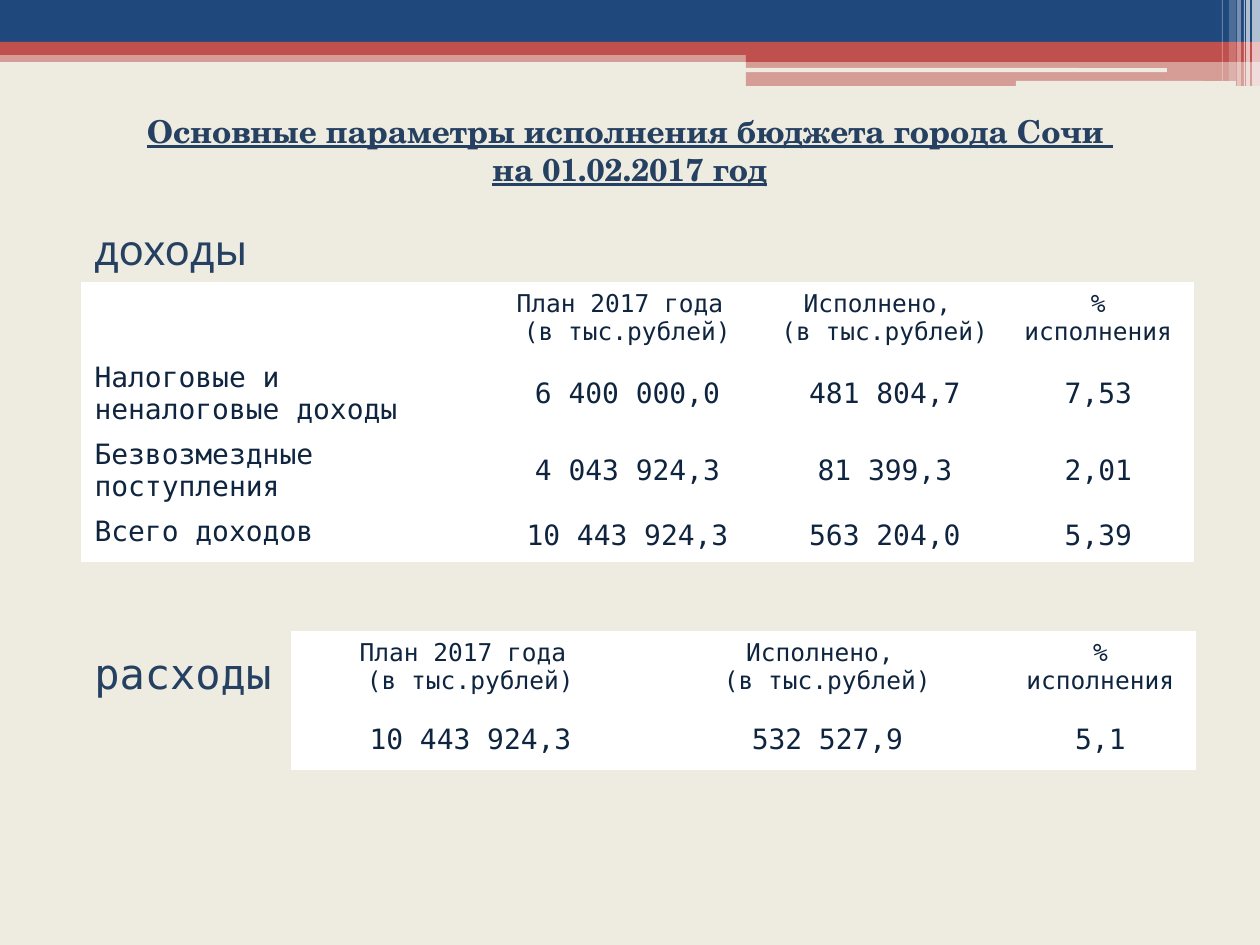
from dataclasses import dataclass

from lxml.etree import SubElement
from pptx import Presentation
from pptx.dml.color import RGBColor
from pptx.enum.shapes import MSO_SHAPE as Shape
from pptx.enum.text import MSO_ANCHOR as Anchor, MSO_AUTO_SIZE as AutoSize, PP_ALIGN as Align
from pptx.oxml.ns import qn
from pptx.util import Emu, Pt


@dataclass(frozen=True)
class Theme:
    """Colours, typefaces and type sizes of the slide."""
    paper: str = "EEECE1"
    navy: str = "1F497D"
    red: str = "C0504D"
    white: str = "FFFFFF"
    heading: str = "254061"
    body: str = "0F243E"
    serif: str = "TeX Gyre Schola"
    sans: str = "Karla"
    mono: str = "DejaVu Sans Mono"
    title_size: int = 18
    section_size: int = 24
    header_size: int = 14
    value_size: int = 16


THEME = Theme()
SLIDE_WIDTH, SLIDE_HEIGHT = 1260, 945
HEADERS = ["План 2017 года \n(в тыс.рублей)", "Исполнено, \n(в тыс.рублей)", "% исполнения"]
INCOME = [
    ["", *HEADERS],
    ["Налоговые и неналоговые доходы", "6 400 000,0", "481 804,7", "7,53"],
    ["Безвозмездные поступления", "4 043 924,3", "81 399,3", "2,01"],
    ["Всего доходов", "10 443 924,3", "563 204,0", "5,39"],
]
SPENDING = [HEADERS, ["10 443 924,3", "532 527,9", "5,1"]]
BANDS = [
    ((0, 50, 1260, 12), THEME.red, 50),
    ((0, 0, 1260, 43), THEME.navy, 100),
    ((0, 42, 1260, 13), THEME.red, 100),
    ((746, 49, 514, 13), THEME.red, 100),
    ((746, 61, 514, 25), THEME.red, 50),
]
SLOTS = [(745, 68, 422, 4), (1016, 81, 220, 5)]
STRIPES = [
    (1252, 8, 86, 65),
    (1246, 4, 86, 65),
    (1244, 1, 86, 60),
    (1237, 4, 86, 40),
    (1229, 7, 81, 20),
    (1222, 1, 81, 30),
]


def px(length):
    """Turn pixels into EMU."""
    return Emu(round(length * 914400 / 126))


def rgb(colour):
    """Turn a hex string into a colour."""
    return RGBColor.from_string(colour)


def add_bar(slide, box, colour, opacity=100, preset=Shape.RECTANGLE):
    """Add a borderless bar of the header ornament."""
    bar = slide.shapes.add_shape(preset, *map(px, box))
    bar.shadow.inherit = False
    bar.line.fill.background()
    bar.fill.solid()
    bar.fill.fore_color.rgb = rgb(colour)
    if opacity < 100:
        tint = bar.fill._xPr.find(qn("a:solidFill"))[0]
        SubElement(tint, qn("a:alpha"), val=str(opacity * 1000))


def write_lines(frame, text, size, typeface, colour, align, strong=False):
    """Write each line of the text as a paragraph with one run."""
    for index, line in enumerate(text.split("\n")):
        paragraph = frame.add_paragraph() if index else frame.paragraphs[0]
        paragraph.alignment = align
        run = paragraph.add_run()
        run.text = line
        font = run.font
        font.size, font.name, font.color.rgb = Pt(size), typeface, rgb(colour)
        if strong:
            font.bold = font.underline = True


def add_heading(slide, box, text, size, typeface, align=Align.LEFT, strong=False):
    """Add a heading in a wrapping text box."""
    heading = slide.shapes.add_textbox(*map(px, box)).text_frame
    heading.word_wrap = True
    heading.auto_size = AutoSize.SHAPE_TO_FIT_TEXT
    write_lines(heading, text, size, typeface, THEME.heading, align, strong)


def add_borders(cell, bottom):
    """Rule a cell in white with the given bottom width in points."""
    properties = cell._tc.get_or_add_tcPr()
    for side, width in (("L", 1), ("R", 1), ("T", 1), ("B", bottom)):
        rule = SubElement(properties, qn(f"a:ln{side}"), w=str(Pt(width)))
        fill = SubElement(rule, qn("a:solidFill"))
        SubElement(fill, qn("a:srgbClr"), val=THEME.white)


def add_budget_table(slide, left, top, widths, heights, rows, has_labels=False):
    """Add a white budget table with a header row."""
    table = slide.shapes.add_table(
        len(rows), len(widths), px(left), px(top), px(sum(widths)), px(sum(heights))
    ).table
    table.first_row = table.horz_banding = False
    for column, width in zip(table.columns, widths):
        column.width = px(width)
    for row, height in zip(table.rows, heights):
        row.height = px(height)
    for r, texts in enumerate(rows):
        for c, text in enumerate(texts):
            cell = table.cell(r, c)
            is_header, is_label = r == 0, has_labels and c == 0
            add_borders(cell, 3 if is_header else 1)
            cell.fill.solid()
            cell.fill.fore_color.rgb = rgb(THEME.white)
            cell.vertical_anchor = Anchor.TOP if is_header or is_label else Anchor.MIDDLE
            if text:
                size = THEME.header_size if is_header else THEME.value_size
                align = Align.LEFT if is_label else Align.CENTER
                write_lines(cell.text_frame, text, size, THEME.mono, THEME.body, align)


def add_ornament(slide):
    """Draw the bands, slots and stripes along the top edge."""
    for box, colour, opacity in BANDS:
        add_bar(slide, box, colour, opacity)
    for box in SLOTS:
        add_bar(slide, box, THEME.paper, preset=Shape.ROUNDED_RECTANGLE)
    for left, width, height, opacity in STRIPES:
        add_bar(slide, (left, 0, width, height), THEME.white, opacity)


def main():
    """Build the budget slide and save it."""
    deck = Presentation()
    deck.slide_width, deck.slide_height = px(SLIDE_WIDTH), px(SLIDE_HEIGHT)
    slide = deck.slides.add_slide(deck.slide_layouts[6])
    slide.background.fill.solid()
    slide.background.fill.fore_color.rgb = rgb(THEME.paper)
    add_ornament(slide)
    add_budget_table(slide, 82, 283, [407, 277, 238, 189], [72, 77, 77, 52], INCOME, has_labels=True)
    add_heading(slide, (82, 217, 277, 63), "доходы", THEME.section_size, THEME.sans)
    add_heading(slide, (82, 641, 277, 63), "расходы", THEME.section_size, THEME.mono)
    add_budget_table(slide, 292, 632, [357, 357, 189], [78, 59], SPENDING)
    add_heading(
        slide, (30, 106, 1200, 89),
        "Основные параметры исполнения бюджета города Сочи \nна 01.02.2017 год",
        THEME.title_size, THEME.serif, Align.CENTER, strong=True,
    )
    deck.save("out.pptx")


if __name__ == "__main__":
    main()
